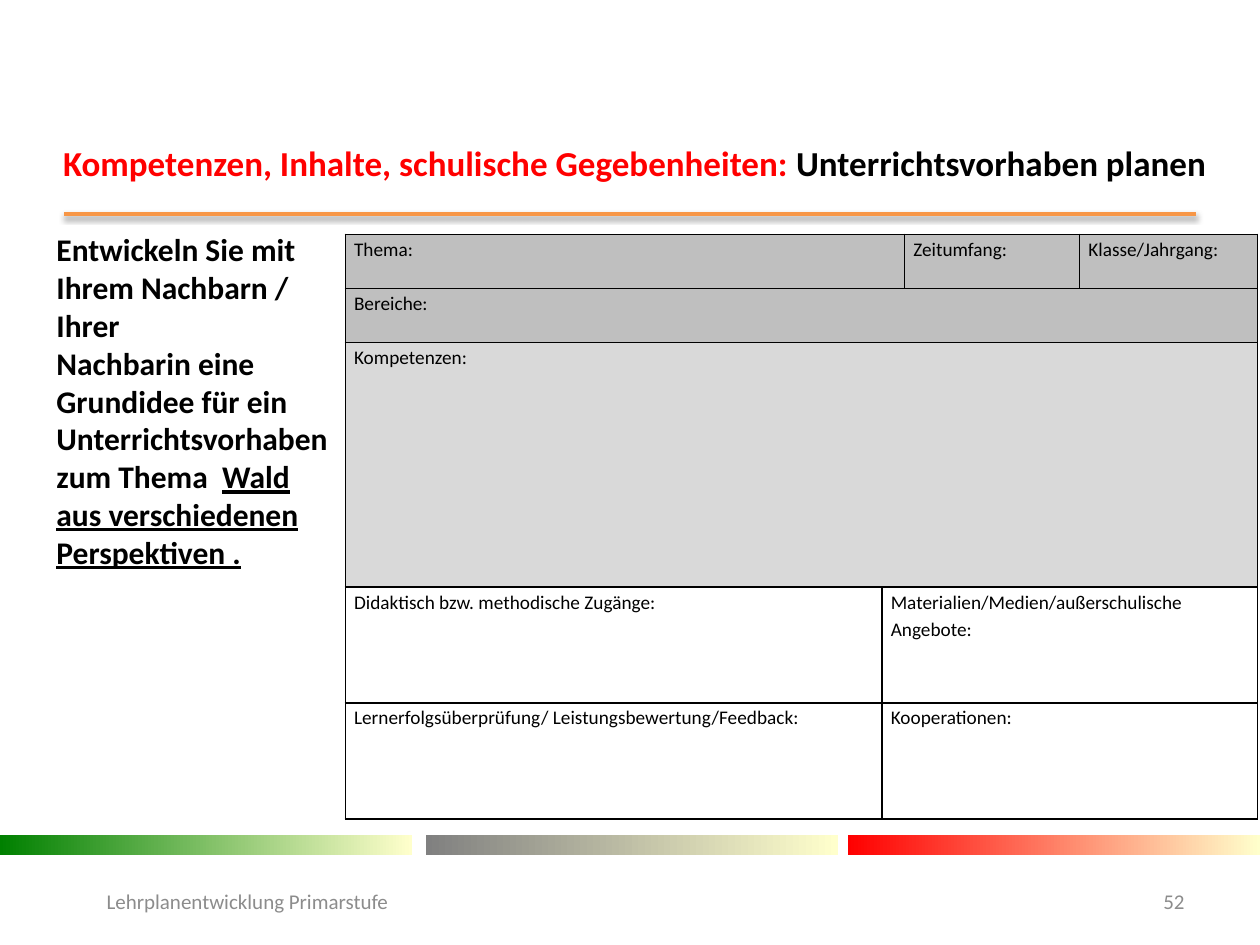
import lxml.etree
import pptx
import pptx.dml.color
import pptx.enum.shapes
import pptx.enum.text
import pptx.oxml
import pptx.oxml.ns
import pptx.util

ALIGN = pptx.enum.text.PP_ALIGN
ANCHOR = pptx.enum.text.MSO_ANCHOR
NAMESPACE = pptx.oxml.ns.nsdecls("a")

presentation = pptx.Presentation()
presentation.slide_width = pptx.util.Inches(10)
presentation.slide_height = pptx.util.Inches(7.5)
slide = presentation.slides.add_slide(presentation.slide_layouts[5])
GRID_UNIT = presentation.slide_width / 100


def grid(*units):
    return [pptx.util.Emu(round(unit * GRID_UNIT)) for unit in units]


def color(value):
    return pptx.dml.color.RGBColor.from_string(value)


rule = slide.shapes.add_connector(
    pptx.enum.shapes.MSO_CONNECTOR.STRAIGHT, *grid(5.1, 17, 94.9, 17))
rule.line.color.rgb = color("F79646")
rule.line.width = pptx.util.Pt(2)
rule._element.spPr.append(pptx.oxml.parse_xml(
    f'<a:effectLst {NAMESPACE}><a:outerShdw blurRad="40000" dist="20000" dir="5400000" '
    'rotWithShape="0"><a:srgbClr val="000000"><a:alpha val="38000"/></a:srgbClr>'
    '</a:outerShdw></a:effectLst>'))

for left, start in zip((0, 33.8, 67.3), ("008000", "808080", "FF0000")):
    bar = slide.shapes.add_shape(
        pptx.enum.shapes.MSO_SHAPE.RECTANGLE, *grid(left, 66.3, 32.7, 1.6))
    bar.shadow.inherit = False
    bar.line.fill.background()
    bar.fill.gradient()
    bar.fill.gradient_angle = 0
    for stop, value in zip(bar.fill.gradient_stops, (start, "FFFFCC")):
        stop.color.rgb = color(value)

title = slide.shapes.title
title.left, title.top, title.width, title.height = grid(4, 10.7, 94.9, 4.4)
task = slide.shapes.add_textbox(*grid(3.5, 17.8, 24.4, 31.3))
footer = slide.shapes.add_textbox(*grid(3.5, 69.5, 32.3, 4))
number = slide.shapes.add_textbox(*grid(88.6, 69.5, 6.4, 4))

column_widths = grid(42.6, 1.1, 13.9, 14.1)
row_heights = grid(4.3, 4.3, 19.4, 9.2, 9.2)
table = slide.shapes.add_table(
    len(row_heights), len(column_widths), *grid(27.4, 18.6),
    sum(column_widths), sum(row_heights)).table
table.first_row = False
table.horz_banding = False
for column, width in zip(table.columns, column_widths):
    column.width = width
for row, height in zip(table.rows, row_heights):
    row.height = height

for row, fill in zip(table.rows, ("BFBFBF", "BFBFBF", "D9D9D9", "FFFFFF", "FFFFFF")):
    for cell in row.cells:
        cell.margin_left, cell.margin_right, cell.margin_top, cell.margin_bottom = grid(0.7, 0.7, 0, 0)
        properties = cell._tc.get_or_add_tcPr()
        for side in ("lnL", "lnR", "lnT", "lnB"):
            properties.append(pptx.oxml.parse_xml(
                f'<a:{side} {NAMESPACE} w="12700"><a:solidFill><a:srgbClr val="000000"/>'
                f'</a:solidFill></a:{side}>'))
        cell.fill.solid()
        cell.fill.fore_color.rgb = color(fill)

for row, first, last in ((0, 0, 1), (1, 0, 3), (2, 0, 3), (3, 1, 3), (4, 1, 3)):
    table.cell(row, first).merge(table.cell(row, last))

fields = {
    (0, 0): "Thema:",
    (0, 2): "Zeitumfang:",
    (0, 3): "Klasse/Jahrgang:",
    (1, 0): "Bereiche:",
    (2, 0): "Kompetenzen:",
    (3, 0): "Didaktisch bzw. methodische Zugänge:",
    (3, 1): "Materialien/Medien/außerschulische Angebote:",
    (4, 0): "Lernerfolgsüberprüfung/ Leistungsbewertung/Feedback:",
    (4, 1): "Kooperationen:",
}

title_runs = [("Kompetenzen, Inhalte, schulische Gegebenheiten: ", "FF0000", False),
              ("Unterrichtsvorhaben planen", "000000", False)]
task_paragraphs = [
    [("Entwickeln Sie mit Ihrem Nachbarn / Ihrer", "000000", False)],
    [("Nachbarin eine Grundidee für ein", "000000", False)],
    [("Unterrichtsvorhaben zum Thema  ", "000000", False),
     ("Wald aus verschiedenen Perspektiven .", "000000", True)],
]
texts = [
    (title, [title_runs], 20, True, ALIGN.LEFT, ANCHOR.TOP, 1),
    (task, task_paragraphs, 18, True, ALIGN.LEFT, ANCHOR.TOP, 1),
    (footer, [[("Lehrplanentwicklung Primarstufe", "8C8C8C", False)]],
     12, False, ALIGN.CENTER, ANCHOR.MIDDLE, 1),
    (number, [[("52", "8C8C8C", False)]], 12, False, ALIGN.RIGHT, ANCHOR.MIDDLE, 1),
]
for position, label in fields.items():
    texts.append((table.cell(*position), [[(label, "000000", False)]],
                  11, False, ALIGN.JUSTIFY, ANCHOR.TOP, 1.15))

for holder, paragraphs, size, bold, alignment, anchor, spacing in texts:
    frame = holder.text_frame
    frame.word_wrap = True
    holder.vertical_anchor = frame.vertical_anchor = anchor
    for index, runs in enumerate(paragraphs):
        paragraph = frame.add_paragraph() if index else frame.paragraphs[0]
        paragraph.alignment = alignment
        paragraph.line_spacing = spacing
        for text, value, underline in runs:
            run = paragraph.add_run()
            run.text = text
            run.font.name = "Calibri"
            run.font.size = pptx.util.Pt(size)
            run.font.bold = bold
            run.font.underline = underline
            run.font.color.rgb = color(value)

presentation.save("out.pptx")
